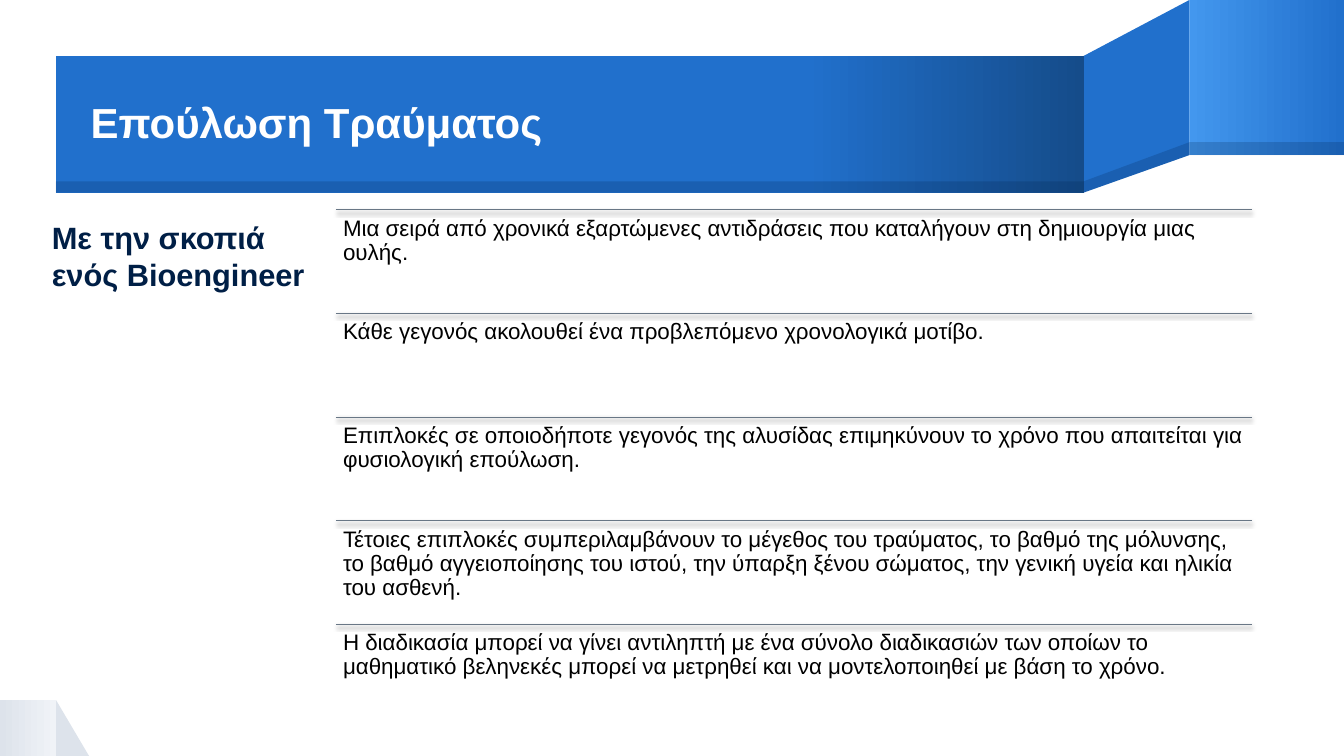
"""Build the wound healing slide on a grid of 24 columns by 13.5 rows."""
import dataclasses
import typing

import lxml.etree
import pptx
import pptx.dml.color
import pptx.enum.shapes
import pptx.enum.text
import pptx.oxml.ns
import pptx.util

COLUMNS = 24
SLIDE_WIDTH = pptx.util.Emu(12192000)
SLIDE_HEIGHT = pptx.util.Emu(6858000)
NAVY, BLUE, LIGHT_BLUE, DEEP_BLUE = "001F46", "2170CC", "4397EE", "154C8A"
GREY, PALE_GREY, RULE_GREY = "DDE3EB", "F0F3F7", "697786"
WHITE, BLACK = "FFFFFF", "000000"

BAND_TOP, BAND_BOTTOM, BAND_EDGE = 1, 3.44, 3.24
FOLD_LEFT, FOLD_RIGHT = 19.35, 21.24
FLAP_BOTTOM, FLAP_EDGE = 2.77, 2.54
CORNER_TOP = 12.5
LIST_LEFT, LIST_TOP, LIST_WIDTH, LIST_PITCH = 6, 3.75, 16.35, 1.85

STATEMENTS = (
    "Μια σειρά από χρονικά εξαρτώμενες αντιδράσεις που καταλήγουν στη δημιουργία μιας ουλής.",
    "Κάθε γεγονός ακολουθεί ένα προβλεπόμενο χρονολογικά μοτίβο.",
    "Επιπλοκές σε οποιοδήποτε γεγονός της αλυσίδας επιμηκύνουν το χρόνο που απαιτείται για "
    "φυσιολογική επούλωση.",
    "Τέτοιες επιπλοκές συμπεριλαμβάνουν το μέγεθος του τραύματος, το βαθμό της μόλυνσης, "
    "το βαθμό αγγειοποίησης του ιστού, την ύπαρξη ξένου σώματος, την γενική υγεία και ηλικία "
    "του ασθενή.",
    "Η διαδικασία μπορεί να γίνει αντιληπτή με ένα σύνολο διαδικασιών των οποίων το "
    "μαθηματικό βεληνεκές μπορεί να μετρηθεί και να μοντελοποιηθεί με βάση το χρόνο.",
)


class Stop(typing.NamedTuple):
    percent: int
    color: str


@dataclasses.dataclass(frozen=True)
class Paint:
    stops: tuple[Stop, ...]
    opacity: int = 100


@dataclasses.dataclass(frozen=True)
class Panel:
    left: float
    top: float
    right: float
    bottom: float
    paint: Paint
    preset: typing.Any = pptx.enum.shapes.MSO_SHAPE.RECTANGLE


@dataclasses.dataclass(frozen=True)
class Facet:
    corners: tuple[tuple[float, float], ...]
    paint: Paint


SHADE = Paint((Stop(0, NAVY),), opacity=20)
DECORATION = (
    Panel(1, CORNER_TOP, 1.59, 13.5, Paint((Stop(0, GREY),)),
          pptx.enum.shapes.MSO_SHAPE.RIGHT_TRIANGLE),
    Panel(0, CORNER_TOP, 1, 13.5, Paint((Stop(0, GREY), Stop(100, PALE_GREY)))),
    Facet(((FOLD_RIGHT, 0), (FOLD_LEFT, BAND_TOP), (FOLD_LEFT, BAND_BOTTOM),
           (FOLD_RIGHT, FLAP_BOTTOM)), Paint((Stop(0, BLUE),))),
    Panel(FOLD_RIGHT, 0, COLUMNS, FLAP_BOTTOM, Paint((Stop(0, LIGHT_BLUE), Stop(100, BLUE)))),
    Panel(1, BAND_TOP, FOLD_LEFT, BAND_BOTTOM,
          Paint((Stop(0, BLUE), Stop(73, BLUE), Stop(100, DEEP_BLUE)))),
    Facet(((FOLD_RIGHT, FLAP_EDGE), (FOLD_LEFT, BAND_EDGE), (FOLD_LEFT, BAND_BOTTOM),
           (FOLD_RIGHT, FLAP_BOTTOM)), SHADE),
    Panel(FOLD_RIGHT, FLAP_EDGE, COLUMNS, FLAP_BOTTOM, SHADE),
    Panel(1, BAND_EDGE, FOLD_LEFT, BAND_BOTTOM, SHADE),
)


def grid(units: float) -> int:
    """Turn grid units into slide lengths."""
    return round(SLIDE_WIDTH * units / COLUMNS)


def rgb(color: str) -> pptx.dml.color.RGBColor:
    """Turn a hex string into a colour."""
    return pptx.dml.color.RGBColor.from_string(color)


def add_node(parent: typing.Any, tag: str, **attributes: typing.Any) -> typing.Any:
    """Append a drawing element and return it."""
    values = {name: str(value) for name, value in attributes.items()}
    return lxml.etree.SubElement(parent, pptx.oxml.ns.qn(tag), values)


def apply_paint(shape: typing.Any, paint: Paint) -> None:
    """Fill a shape with a solid colour or a left-to-right gradient."""
    shape.shadow.inherit = False
    shape.line.fill.background()
    if len(paint.stops) == 1:
        shape.fill.solid()
        shape.fill.fore_color.rgb = rgb(paint.stops[0].color)
        if paint.opacity < 100:
            color = shape._element.spPr.find(".//" + pptx.oxml.ns.qn("a:srgbClr"))
            add_node(color, "a:alpha", val=paint.opacity * 1000)
        return
    shape.fill.gradient()
    shape.fill.gradient_angle = 0
    stop_list = shape._element.spPr.find(".//" + pptx.oxml.ns.qn("a:gsLst"))
    for default_stop in list(stop_list):
        stop_list.remove(default_stop)
    for stop in paint.stops:
        node = add_node(stop_list, "a:gs", pos=stop.percent * 1000)
        add_node(node, "a:srgbClr", val=stop.color)


def add_decoration(page: typing.Any, part: Panel | Facet) -> None:
    """Draw one panel or slanted facet."""
    if isinstance(part, Panel):
        shape = page.shapes.add_shape(
            part.preset, grid(part.left), grid(part.top),
            grid(part.right) - grid(part.left), grid(part.bottom) - grid(part.top))
    else:
        corners = [(grid(across), grid(down)) for across, down in part.corners]
        builder = page.shapes.build_freeform(*corners[0], scale=1.0)
        builder.add_line_segments(corners[1:], close=True)
        shape = builder.convert_to_shape()
    apply_paint(shape, part.paint)


def add_text(page: typing.Any, text: str, left: float, top: float, width: float, height: float, *,
             size: int, color: str, bold: bool = False, inset: float = 0,
             left_inset: float | None = None, line_spacing: float = 1.0,
             anchor: typing.Any = pptx.enum.text.MSO_ANCHOR.TOP) -> None:
    """Place one paragraph of formatted text on the grid."""
    box = page.shapes.add_textbox(grid(left), grid(top), grid(width), grid(height))
    frame = box.text_frame
    frame.word_wrap = True
    frame.vertical_anchor = anchor
    frame.margin_top = frame.margin_right = frame.margin_bottom = pptx.util.Inches(inset)
    frame.margin_left = pptx.util.Inches(inset if left_inset is None else left_inset)
    para = frame.paragraphs[0]
    para.line_spacing = line_spacing
    span = para.add_run()
    span.text = text
    span.font.name = "Arial"
    span.font.size = pptx.util.Pt(size)
    span.font.bold = bold
    span.font.color.rgb = rgb(color)


def add_rule(page: typing.Any, left: float, top: float, width: float) -> None:
    """Draw a thin horizontal line with a soft shadow below."""
    rule = page.shapes.add_connector(
        pptx.enum.shapes.MSO_CONNECTOR.STRAIGHT,
        grid(left), grid(top), grid(left + width), grid(top))
    rule.line.color.rgb = rgb(RULE_GREY)
    rule.line.width = pptx.util.Pt(0.75)
    effects = add_node(rule._element.spPr, "a:effectLst")
    shadow = add_node(effects, "a:outerShdw", blurRad=pptx.util.Pt(3.1),
                      dist=pptx.util.Pt(1.8), dir=90 * 60000, rotWithShape=0)
    color = add_node(shadow, "a:srgbClr", val=BLACK)
    add_node(color, "a:alpha", val=35000)


def main() -> None:
    """Build and save the deck."""
    deck = pptx.Presentation()
    deck.slide_width, deck.slide_height = SLIDE_WIDTH, SLIDE_HEIGHT
    page = deck.slides.add_slide(deck.slide_layouts[6])
    for part in DECORATION:
        add_decoration(page, part)
    add_text(page, "Επούλωση Τραύματος", 1.62, 1.03, 17.73, 2.41, size=30, color=WHITE,
             bold=True, line_spacing=0.9, anchor=pptx.enum.text.MSO_ANCHOR.MIDDLE)
    add_text(page, "Με την σκοπιά ενός Bioengineer", 0.75, 3.91, 4.81, 3.15, size=22,
             color=NAVY, bold=True, left_inset=0.1)
    for index, statement in enumerate(STATEMENTS):
        top = LIST_TOP + index * LIST_PITCH
        add_rule(page, LIST_LEFT, top, LIST_WIDTH)
        add_text(page, statement, LIST_LEFT, top, LIST_WIDTH, LIST_PITCH, size=16,
                 color=BLACK, inset=0.07, line_spacing=0.9)
    deck.save("out.pptx")


if __name__ == "__main__":
    main()
